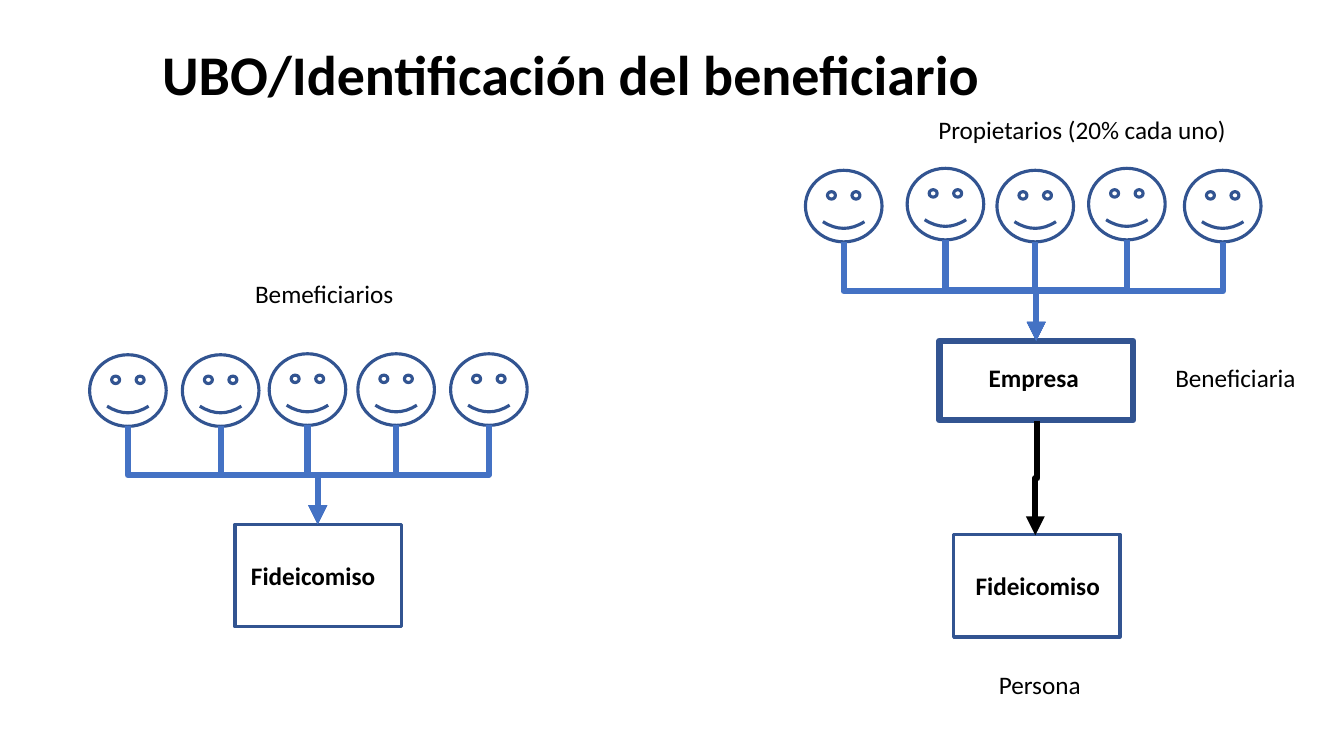
from dataclasses import dataclass

from lxml.etree import SubElement
from pptx import Presentation
from pptx.dml.color import RGBColor
from pptx.enum.shapes import MSO_CONNECTOR, MSO_SHAPE
from pptx.enum.text import MSO_AUTO_SIZE, PP_ALIGN
from pptx.oxml.ns import qn
from pptx.slide import Slide
from pptx.util import Inches, Pt

COLORS = {"outline": "325491", "link": "4472C4", "black": "000000"}
SLIDE_WIDTH, SLIDE_HEIGHT = Inches(13.333), Inches(7.5)
FACE_WIDTH, FACE_HEIGHT = 5.7, 9.47
LABEL_HEIGHT = 5.33


@dataclass
class Box:
    left: float
    top: float
    width: float
    height: float
    line: float = 2.25
    preset: MSO_SHAPE = MSO_SHAPE.RECTANGLE


@dataclass
class Label:
    text: str
    left: float
    top: float
    width: float
    height: float = LABEL_HEIGHT
    size: int = 18
    bold: bool = False
    centered: bool = False


@dataclass
class Arrow:
    start: tuple[float, float]
    end: tuple[float, float]
    color: str = "link"


@dataclass
class Group:
    faces: list[tuple[float, float]]
    target: tuple[float, float]


GROUPS = [
    Group([(6.67, 46.93), (13.57, 46.93), (20.03, 46.8), (26.63, 46.8), (33.53, 46.8)],
          (23.64, 69.33)),
    Group([(59.93, 22.53), (67.5, 22.27), (74.18, 22.53), (81, 22.27), (88.13, 22.53)],
          (77.1, 45.07)),
]
BOXES = [
    Box(17.48, 69.33, 12.38, 13.6),
    Box(70.95, 70.67, 12.38, 13.6),
    Box(69.9, 45.07, 14.4, 10.53, line=4.5),
]
LABELS = [
    Label("UBO/Identificación del beneficiario", 11.33, 4.53, 63.08, 10.27, 40, bold=True),
    Label("Bemeficiarios", 17.18, 36.13, 13.88, centered=True),
    Label("Fideicomiso ", 16.65, 73.47, 13.73, bold=True, centered=True),
    Label("Propietarios (20% cada uno)", 69.08, 14.4, 23.18),
    Label("Empresa", 72.83, 47.33, 8.25, bold=True),
    Label("Beneficiaria", 84.98, 47.33, 13.88, centered=True),
    Label("Fideicomiso", 70.35, 74.8, 13.73, bold=True, centered=True),
    Label("Persona", 73.58, 87.87, 7.65),
]
COMPANY_TO_TRUST = Arrow((77.18, 55.73), (77.03, 70.8), "black")


def across(percent: float) -> int:
    return round(SLIDE_WIDTH * percent / 100)


def down(percent: float) -> int:
    return round(SLIDE_HEIGHT * percent / 100)


def frame(item: Box | Label) -> tuple[int, int, int, int]:
    return across(item.left), down(item.top), across(item.width), down(item.height)


def color(name: str) -> RGBColor:
    return RGBColor.from_string(COLORS[name])


def draw_box(slide: Slide, box: Box) -> None:
    shape = slide.shapes.add_shape(box.preset, *frame(box))
    shape.shadow.inherit = False
    shape.fill.background()
    shape.line.color.rgb = color("outline")
    shape.line.width = Pt(box.line)


def draw_label(slide: Slide, label: Label) -> None:
    text_frame = slide.shapes.add_textbox(*frame(label)).text_frame
    text_frame.word_wrap = label.centered
    text_frame.auto_size = MSO_AUTO_SIZE.SHAPE_TO_FIT_TEXT
    paragraph = text_frame.paragraphs[0]
    paragraph.alignment = PP_ALIGN.CENTER if label.centered else PP_ALIGN.LEFT
    run = paragraph.add_run()
    run.text = label.text
    formats = {"name": "Calibri", "size": Pt(label.size), "bold": label.bold}
    for attribute, value in formats.items():
        setattr(run.font, attribute, value)
    run.font.color.rgb = color("black")


def draw_arrow(slide: Slide, arrow: Arrow) -> None:
    start_x, end_x = across(arrow.start[0]), across(arrow.end[0])
    start_y, end_y = down(arrow.start[1]), down(arrow.end[1])
    width, height = end_y - start_y, abs(end_x - start_x)
    left = (start_x + end_x - width) // 2
    top = (start_y + end_y - height) // 2
    connector = slide.shapes.add_connector(
        MSO_CONNECTOR.ELBOW, left, top, left + width, top + height)
    turns_right = end_x > start_x
    transform = connector._element.spPr.get_or_add_xfrm()
    transform.set("rot", str((270 if turns_right else 90) * 60000))
    if turns_right:
        transform.set("flipH", "1")
    connector.line.color.rgb = color(arrow.color)
    connector.line.width = Pt(4.5)
    SubElement(connector.line._get_or_add_ln(), qn("a:tailEnd"), type="triangle")
    SubElement(connector._element.spPr, qn("a:effectLst"))


def draw_group(slide: Slide, group: Group) -> None:
    for left, top in group.faces:
        draw_box(slide, Box(left, top, FACE_WIDTH, FACE_HEIGHT, preset=MSO_SHAPE.SMILEY_FACE))
        draw_arrow(slide, Arrow((left + FACE_WIDTH / 2, top + FACE_HEIGHT), group.target))


def main() -> None:
    presentation = Presentation()
    presentation.slide_width, presentation.slide_height = SLIDE_WIDTH, SLIDE_HEIGHT
    slide = presentation.slides.add_slide(presentation.slide_layouts[6])
    for box in BOXES:
        draw_box(slide, box)
    for group in GROUPS:
        draw_group(slide, group)
    draw_arrow(slide, COMPANY_TO_TRUST)
    for label in LABELS:
        draw_label(slide, label)
    presentation.save("out.pptx")


if __name__ == "__main__":
    main()
